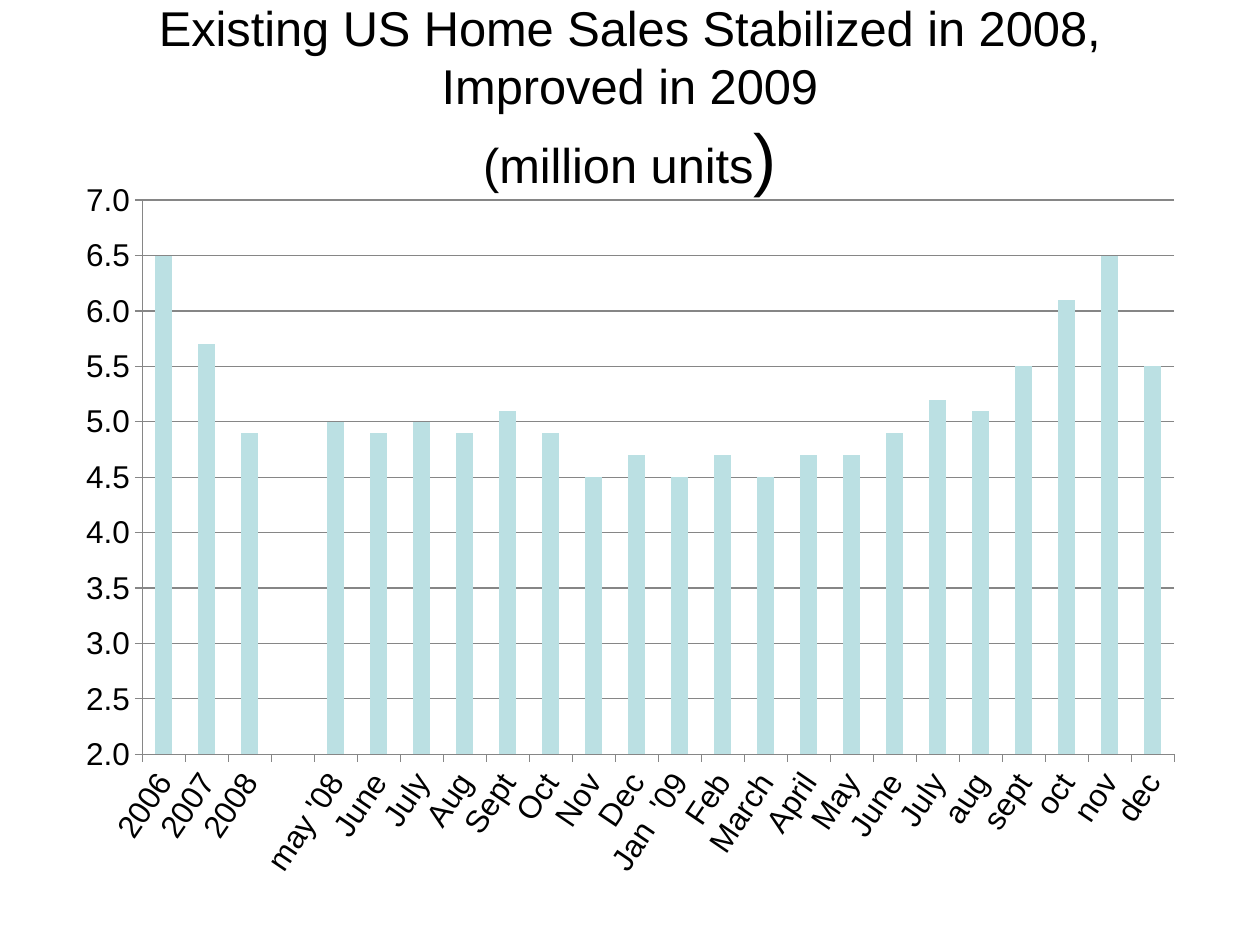
from lxml.etree import fromstring
from pptx import Presentation
from pptx.chart.data import CategoryChartData
from pptx.dml.color import RGBColor
from pptx.enum.chart import XL_CHART_TYPE, XL_TICK_LABEL_POSITION, XL_TICK_MARK
from pptx.enum.text import MSO_ANCHOR, MSO_AUTO_SIZE, PP_ALIGN
from pptx.util import Inches, Pt

COLORS = {"text": "000000", "bars": "BBE0E3", "lines": "868686", "background": "FFFFFF"}
FONT = "Arial"
CHART_NS = "http://schemas.openxmlformats.org/drawingml/2006/chart"
PERIODS = ["2006", "2007", "2008", "", "may '08", "June", "July", "Aug", "Sept", "Oct",
           "Nov", "Dec", "Jan  '09", "Feb", "March", "April", "May", "June", "July",
           "aug", "sept", "oct", "nov", "dec"]
SALES = [6.5, 5.7, 4.9, None, 5, 4.9, 5, 4.9, 5.1, 4.9, 4.5, 4.7,
         4.5, 4.7, 4.5, 4.7, 4.7, 4.9, 5.2, 5.1, 5.5, 6.1, 6.5, 5.5]


def color(name):
    """Return the named palette colour."""
    return RGBColor.from_string(COLORS[name])


def style_font(font, size):
    """Apply the slide's typeface and text colour at a size in points."""
    font.name = FONT
    font.size = Pt(size)
    font.bold = False
    font.color.rgb = color("text")


def style_line(line):
    """Draw a thin grey chart line."""
    line.color.rgb = color("lines")
    line.width = Pt(0.75)


def place_title(title, left, top, width, height):
    """Move the title placeholder into its box and fill it."""
    title.left, title.top, title.width, title.height = left, top, width, height
    frame = title.text_frame
    frame.word_wrap = True
    frame.auto_size = MSO_AUTO_SIZE.NONE
    frame.vertical_anchor = MSO_ANCHOR.MIDDLE
    heading = frame.paragraphs[0]
    heading.alignment = PP_ALIGN.CENTER
    style_font(heading.font, 27.9)
    heading.add_run().text = "Existing US Home Sales Stabilized in 2008, Improved in 2009"
    heading.add_line_break()
    heading.add_run().text = "(million units"
    closing = heading.add_run()
    closing.text = ")"
    closing.font.size = Pt(39.6)


def fix_plot_area(chart, x, y, w, h):
    """Set the inner plot area as fractions of the chart's box."""
    plot_area = chart._chartSpace.chart.plotArea
    for old_layout in plot_area.findall(f"{{{CHART_NS}}}layout"):
        plot_area.remove(old_layout)
    fractions = "".join(f'<c:{key} val="{value}"/>'
                        for key, value in (("x", x), ("y", y), ("w", w), ("h", h)))
    plot_area.insert(0, fromstring(
        f'<c:layout xmlns:c="{CHART_NS}"><c:manualLayout><c:layoutTarget val="inner"/>'
        f'<c:xMode val="edge"/><c:yMode val="edge"/>{fractions}'
        f'</c:manualLayout></c:layout>'))


def place_sales_chart(slide, left, top, width, height):
    """Draw the home sales columns in the given box."""
    sales = CategoryChartData(number_format="0.0")
    sales.categories = PERIODS
    sales.add_series("Series 1", SALES)
    chart = slide.shapes.add_chart(
        XL_CHART_TYPE.COLUMN_CLUSTERED, left, top, width, height, sales).chart
    chart.has_legend = False
    chart.has_title = False
    style_font(chart.font, 18)

    columns = chart.plots[0]
    columns.vary_by_categories = False
    columns.gap_width = 150
    bar_fill = columns.series[0].format.fill
    bar_fill.solid()
    bar_fill.fore_color.rgb = color("bars")

    periods, units = chart.category_axis, chart.value_axis
    for axis in (periods, units):
        axis.major_tick_mark = XL_TICK_MARK.OUTSIDE
        axis.minor_tick_mark = XL_TICK_MARK.NONE
        style_line(axis.format.line)
        style_font(axis.tick_labels.font, 18)
    periods.has_major_gridlines = False
    periods.tick_label_position = XL_TICK_LABEL_POSITION.LOW
    periods._element.txPr.bodyPr.set("rot", str(-56 * 60000))
    units.minimum_scale, units.maximum_scale, units.major_unit = 2, 7, 0.5
    units.has_major_gridlines = True
    style_line(units.major_gridlines.format.line)
    units.tick_labels.number_format = "0.0"
    units.tick_labels.number_format_is_linked = False
    fix_plot_area(chart, 0.07, 0.045, 0.91, 0.765)


def main():
    """Build and save the slide."""
    deck = Presentation()
    deck.slide_width, deck.slide_height = Inches(10), Inches(7.5)
    slide = deck.slides.add_slide(deck.slide_layouts[5])
    slide.background.fill.solid()
    slide.background.fill.fore_color.rgb = color("background")
    place_title(slide.shapes.title, Inches(0.5), Inches(0.3), Inches(9), Inches(0.95))
    place_sales_chart(slide, Inches(0.5), Inches(1.33), Inches(9), Inches(5.75))
    deck.save("out.pptx")


if __name__ == "__main__":
    main()
